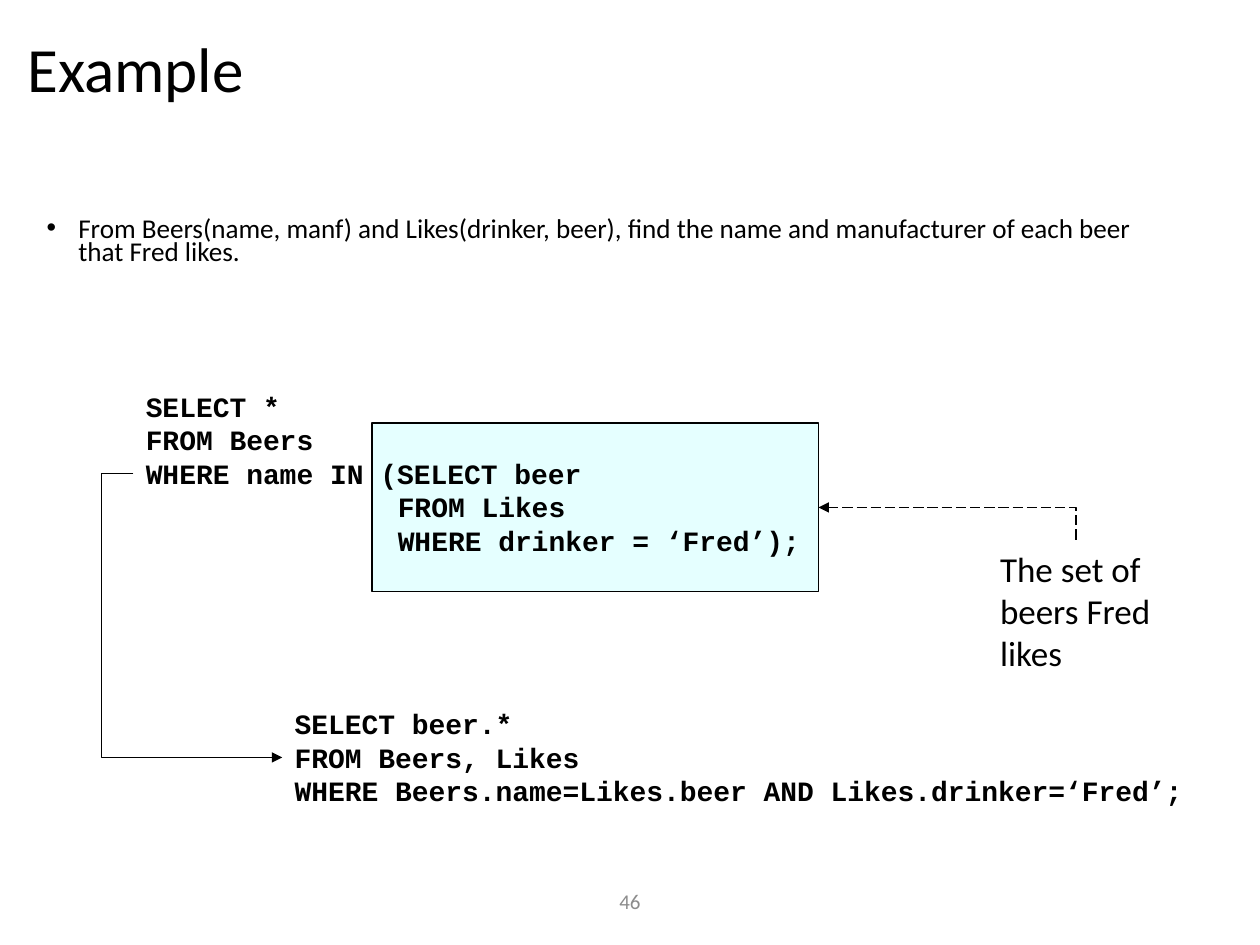
"""Build the slide that turns a nested SQL query into a join."""
import dataclasses
import pptx
import pptx.dml.color
import pptx.enum.dml
import pptx.enum.shapes
import pptx.enum.text
import pptx.oxml
import pptx.oxml.ns
import pptx.util

Cm = pptx.util.Cm
Pt = pptx.util.Pt
Align = pptx.enum.text.PP_ALIGN
Anchor = pptx.enum.text.MSO_ANCHOR
NS = pptx.oxml.ns.nsdecls("a")


@dataclasses.dataclass(frozen=True)
class Theme:
    ink: str = "000000"
    gray: str = "8C8C8C"
    cyan: str = "CCFFFF"
    sans: str = "Calibri"
    mono: str = "Courier New"
    head: float = 36
    note: float = 20
    code: float = 16
    body: float = 15.5
    foot: float = 12
    rule: float = 0.75


theme = Theme()


def rgb(code):
    return pptx.dml.color.RGBColor.from_string(code)


def write(shape, text, size, font=theme.sans, ink=theme.ink, bold=False):
    frame = shape.text_frame
    frame.text = text
    frame.word_wrap = True
    for para in frame.paragraphs:
        for run in para.runs:
            run.font.name = font
            run.font.size = Pt(size)
            run.font.bold = bold
            run.font.color.rgb = rgb(ink)
    return frame


deck = pptx.Presentation()
deck.slide_width = Cm(25.4)
deck.slide_height = Cm(19.05)
slide = deck.slides.add_slide(deck.slide_layouts[5])
shapes = slide.shapes

title = shapes.title
title.left, title.top, title.width, title.height = Cm(0.3), Cm(0.2), Cm(24.8), Cm(2.51)
frame = write(title, "Example", theme.head)
frame.vertical_anchor = Anchor.MIDDLE
frame.paragraphs[0].alignment = Align.LEFT
frame.paragraphs[0].line_spacing = 0.9

page = shapes.add_textbox(Cm(8.41), Cm(17.65), Cm(8.58), Cm(1.02))
frame = write(page, "46", theme.foot, ink=theme.gray)
frame.vertical_anchor = Anchor.MIDDLE
frame.paragraphs[0].alignment = Align.CENTER

task = shapes.add_textbox(Cm(0.69), Cm(4.32), Cm(22.86), Cm(2.59))
frame = write(
    task,
    "From Beers(name, manf) and Likes(drinker, beer), find the name and "
    "manufacturer of each beer that Fred likes.",
    theme.body,
)
para = frame.paragraphs[0]
para.line_spacing = 0.7
para.space_before = Pt(10)
props = para._p.get_or_add_pPr()
props.set("marL", str(Cm(0.64)))
props.set("indent", str(Cm(-0.64)))
props.append(pptx.oxml.parse_xml(f'<a:buFont {NS} typeface="Arial"/>'))
props.append(pptx.oxml.parse_xml(f'<a:buChar {NS} char="•"/>'))

note = shapes.add_textbox(Cm(19.91), Cm(10.92), Cm(3.58), Cm(2.82))
write(note, "The set of\nbeers Fred\nlikes", theme.note).word_wrap = False

panel = shapes.add_shape(
    pptx.enum.shapes.MSO_SHAPE.RECTANGLE, Cm(7.5), Cm(8.53), Cm(9), Cm(3.4)
)
panel.shadow.inherit = False
panel.fill.solid()
panel.fill.fore_color.rgb = rgb(theme.cyan)
tint = panel._element.spPr.find(".//" + pptx.oxml.ns.qn("a:srgbClr"))
tint.append(pptx.oxml.parse_xml(f'<a:alpha {NS} val="50000"/>'))
panel.line.color.rgb = rgb(theme.ink)
panel.line.width = Pt(theme.rule)

nested = (
    "SELECT *\nFROM Beers\nWHERE name IN (SELECT beer\n"
    "FROM Likes\nWHERE drinker = ‘Fred’);"
)
joined = (
    "SELECT beer.*\nFROM Beers, Likes\n"
    "WHERE Beers.name=Likes.beer AND Likes.drinker=‘Fred’;"
)
for text, x, y, wide, high in (
    (nested, 2.69, 7.72, 16.36, 3.66),
    (joined, 5.69, 14.12, 18.59, 2.29),
):
    query = shapes.add_textbox(Cm(x), Cm(y), Cm(wide), Cm(high))
    frame = write(query, text, theme.code, theme.mono, bold=True)
    for para in frame.paragraphs[3:]:
        props = para._p.get_or_add_pPr()
        props.set("marL", str(Cm(5.08)))
        props.set("indent", "0")

dash = pptx.enum.dml.MSO_LINE.LONG_DASH
for ends, kind, bend, style, tip in (
    ((16.5, 10.23, 21.69, 10.92), "bentConnector2", None, dash, "headEnd"),
    ((2.69, 9.55, 5.69, 15.27), "bentConnector3", -21200, None, "tailEnd"),
):
    link = shapes.add_connector(
        pptx.enum.shapes.MSO_CONNECTOR.ELBOW, *[Cm(end) for end in ends]
    )
    link.line.color.rgb = rgb(theme.ink)
    link.line.width = Pt(theme.rule)
    if style:
        link.line.dash_style = style
    props = link._element.spPr
    props.prstGeom.set("prst", kind)
    if bend:
        props.prstGeom.get_or_add_avLst().append(
            pptx.oxml.parse_xml(f'<a:gd {NS} name="adj1" fmla="val {bend}"/>')
        )
    link.line._ln.append(pptx.oxml.parse_xml(f'<a:{tip} {NS} type="triangle"/>'))
    props.append(pptx.oxml.parse_xml(f"<a:effectLst {NS}/>"))

deck.save("out.pptx")
